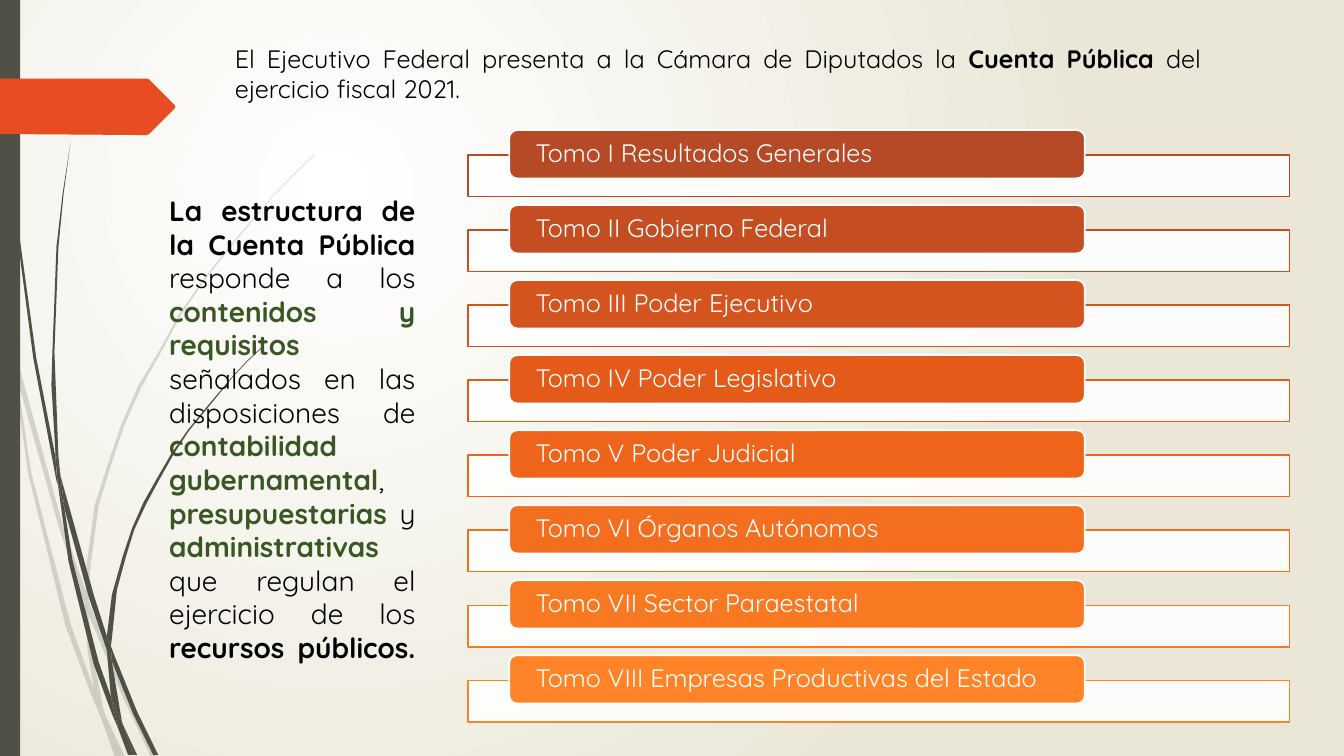
from lxml import etree
from pptx import Presentation
from pptx.dml.color import RGBColor
from pptx.enum.shapes import MSO_SHAPE
from pptx.enum.text import MSO_ANCHOR, MSO_AUTO_SIZE, PP_ALIGN
from pptx.oxml import parse_xml
from pptx.oxml.ns import qn
from pptx.util import Inches, Pt

RECT, ROUND = MSO_SHAPE.RECTANGLE, MSO_SHAPE.ROUNDED_RECTANGLE
MIDDLE, GROW = MSO_ANCHOR.MIDDLE, MSO_AUTO_SIZE.SHAPE_TO_FIT_TEXT
LEFT, JUSTIFY = PP_ALIGN.LEFT, PP_ALIGN.JUSTIFY

FONT = "Quicksand"
BLACK, WHITE, GREEN, GREY, RED = "000000", "FFFFFF", "385723", "505046", "E84C22"

BACK = """<a:gradFill xmlns:a="http://schemas.openxmlformats.org/drawingml/2006/main"
 rotWithShape="1"><a:gsLst>
<a:gs pos="0"><a:srgbClr val="FFFFFF"/></a:gs>
<a:gs pos="100000"><a:srgbClr val="EAE7D8"/></a:gs></a:gsLst>
<a:path path="circle"><a:fillToRect l="50000" t="50000" r="100000" b="100000"/></a:path>
</a:gradFill>"""

# Outlines are x, y pairs in inches.
PALE_GRASS = [
    (0.11, 3.5, 0.09, 3.22, 0, 2.82, 0, 2.99, 0.1, 3.44),
    (0.58, 5.22, 0.84, 5.99, 0.85, 5.86, 0.62, 5.2, 0.14, 3.45, 0.17, 3.76),
    (0.92, 6.07, 0.88, 5.96, 0.88, 6.1, 1.23, 6.94, 1.5, 7.51, 1.55, 7.51,
     1.27, 6.92),
    (1.19, 7.51, 1.24, 7.51, 1.05, 7.11),
    (0.93, 6.83, 0.7, 6.19, 0.31, 4.69, 0.17, 3.76, 0.11, 3.5, 0.28, 4.7,
     0.65, 6.21, 0.92, 6.93, 1.01, 7.14, 0.99, 7.07),
    (0.84, 5.99, 0.87, 6.46, 0.93, 6.83, 0.96, 6.92, 1.05, 7.11, 1.03, 7.06,
     0.91, 6.46, 0.88, 6.1, 0.88, 6.08),
    (0.88, 5.84, 0.9, 5.6, 0.98, 5.01, 1.1, 4.62, 1.23, 4.23, 1.4, 3.85,
     1.6, 3.49, 1.8, 3.12, 2.03, 2.78, 2.29, 2.45, 2.68, 1.98, 2.9, 1.75,
     3.12, 1.54, 3.12, 1.53, 2.89, 1.75, 2.68, 1.97, 2.28, 2.44, 2.02, 2.77,
     1.78, 3.11, 1.58, 3.48, 1.37, 3.83, 1.2, 4.22, 1.07, 4.61, 0.94, 5.01,
     0.86, 5.6, 0.85, 5.86, 0.88, 5.96),
    (1.01, 7.14, 1.14, 7.51, 1.19, 7.51),
    (0.88, 6.08, 0.88, 5.96, 0.85, 5.86, 0.84, 5.99),
    (0.96, 6.92, 0.93, 6.83, 0.99, 7.07, 1.01, 7.14, 1.19, 7.51, 1.05, 7.11),
]
DARK_GRASS = [
    (0.07, 1.1, 0.17, 2.33, 0.33, 3.55, 0.56, 4.77, 0.57, 4.81, 0.55, 4.53,
     0.36, 3.55, 0.19, 2.32, 0.08, 1.09, 0.05, 0.48, 0.04, 0, 0.03, 0,
     0.04, 0.48),
    (0.88, 5.92, 1.06, 6.45, 1.06, 6.31, 0.93, 5.9, 0.6, 4.72, 0.64, 5.05),
    (1.13, 6.49, 1.1, 6.41, 1.11, 6.56, 1.32, 7.08, 1.52, 7.49, 1.57, 7.49,
     1.36, 7.06),
    (1.1, 6.91, 0.98, 6.57, 0.72, 5.56, 0.64, 5.05, 0.57, 4.77, 0.68, 5.57,
     0.93, 6.59, 1.11, 7.08, 1.17, 7.22, 1.16, 7.17),
    (0.6, 4.72, 0.58, 4.53, 0.54, 3.49, 0.58, 2.45, 0.63, 1.93, 0.7, 1.41,
     0.62, 1.93, 0.56, 2.45, 0.52, 3.49, 0.51, 3.82, 0.55, 4.49),
    (1.33, 7.49, 1.36, 7.49, 1.22, 7.19),
    (0.57, 4.77, 0.64, 5.05, 0.6, 4.72, 0.55, 4.49, 0.55, 4.53),
    (1.11, 6.33, 1.16, 5.85, 1.25, 5.52, 1.33, 5.26, 1.45, 5, 1.58, 4.76,
     1.72, 4.51, 1.87, 4.28, 2.05, 4.06, 2.31, 3.74, 2.45, 3.59, 2.61, 3.44,
     2.6, 3.44, 2.45, 3.58, 2.31, 3.73, 2.04, 4.05, 1.86, 4.27, 1.7, 4.5,
     1.56, 4.74, 1.42, 4.99, 1.31, 5.24, 1.22, 5.51, 1.11, 5.9, 1.06, 6.31,
     1.1, 6.41),
    (1.17, 7.22, 1.27, 7.49, 1.31, 7.49),
    (1.06, 6.45, 1.1, 6.91, 1.16, 7.06, 1.22, 7.19, 1.21, 7.16, 1.11, 6.56,
     1.09, 6.51),
    (1.06, 6.45, 1.09, 6.51, 1.11, 6.56, 1.1, 6.41, 1.06, 6.31),
    (1.16, 7.06, 1.1, 6.91, 1.16, 7.17, 1.17, 7.22, 1.3, 7.49, 1.33, 7.49,
     1.22, 7.19),
]
ARROW = (1.73, 1.08, 1.48, 1.33, 1.46, 1.34, 1.36, 1.34, 0, 1.33, 0, 0.78,
         1.46, 0.78, 1.48, 0.79, 1.73, 1.04, 1.74, 1.06)

INTRO = [("El Ejecutivo Federal presenta a la Cámara de Diputados la ", BLACK, False),
         ("Cuenta Pública ", BLACK, True),
         ("del ejercicio fiscal 2021.", BLACK, False)]
BODY = [("La estructura de la Cuenta Pública ", BLACK, True),
        ("responde a los ", BLACK, False),
        ("contenidos y requisitos ", GREEN, True),
        ("señalados en las disposiciones de ", BLACK, False),
        ("contabilidad gubernamental", GREEN, True),
        (", ", BLACK, False),
        ("presupuestarias", GREEN, True),
        (" y ", BLACK, False),
        ("administrativas", GREEN, True),
        (" que regulan el ejercicio de los ", BLACK, False),
        ("recursos públicos. ", BLACK, True)]
TOMES = [("Tomo I Resultados Generales", "B64926"),
         ("Tomo II Gobierno Federal", "C44E22"),
         ("Tomo III Poder Ejecutivo", "D3541E"),
         ("Tomo IV Poder Legislativo", "E35A19"),
         ("Tomo V Poder Judicial", "ED641A"),
         ("Tomo VI Órganos Autónomos", "F36E1E"),
         ("Tomo VII Sector Paraestatal", "F97922"),
         ("Tomo VIII Empresas Productivas del Estado", "FF8427")]
TOP, STEP = 1.29, 5.21 / 7


def rgb(code):
    return RGBColor.from_string(code)


def write(frame, runs, size=18, align=LEFT, space=None):
    """Fill the frame's first paragraph with (text, colour, bold) runs."""
    frame.word_wrap = True
    para = frame.paragraphs[0]
    para.alignment = align
    para.line_spacing = space
    for text, color, bold in runs:
        run = para.add_run()
        run.text = text
        font = run.font
        font.name, font.size, font.bold = FONT, Pt(size), bold
        font.color.rgb = rgb(color)


class Deck:
    def __init__(self):
        self.prs = Presentation()
        self.prs.slide_width, self.prs.slide_height = Inches(13.33), Inches(7.5)
        self.slide = self.prs.slides.add_slide(self.prs.slide_layouts[6])
        self.shapes = self.slide.shapes

    def back(self):
        fill = self.slide.background.fill
        fill.solid()
        solid = self.slide.element.find(".//" + qn("p:bgPr")).find(qn("a:solidFill"))
        solid.getparent().replace(solid, parse_xml(BACK))

    def paint(self, shape, fill, line=None, alpha=100):
        shape.shadow.inherit = False
        shape.fill.solid()
        shape.fill.fore_color.rgb = rgb(fill)
        if alpha < 100:
            color = shape.fill._xPr.find(".//" + qn("a:srgbClr"))
            etree.SubElement(color, qn("a:alpha")).set("val", str(alpha * 1000))
        if line:
            shape.line.color.rgb = rgb(line)
            shape.line.width = Pt(1.25)
        else:
            shape.line.fill.background()

    def box(self, kind, x, y, w, h, fill, **look):
        shape = self.shapes.add_shape(kind, Inches(x), Inches(y), Inches(w), Inches(h))
        self.paint(shape, fill, **look)
        return shape

    def outline(self, shapes, flat, fill, **look):
        spots = [(Inches(x), Inches(y)) for x, y in zip(flat[::2], flat[1::2])]
        pen = shapes.build_freeform(*spots[0])
        pen.add_line_segments(spots[1:], close=True)
        self.paint(pen.convert_to_shape(), fill, **look)

    def grass(self, blades, alpha):
        group = self.shapes.add_group_shape()
        for blade in blades:
            self.outline(group.shapes, blade, GREY, alpha=alpha)

    def text(self, x, y, w, h, runs, **form):
        box = self.shapes.add_textbox(Inches(x), Inches(y), Inches(w), Inches(h))
        write(box.text_frame, runs, **form)
        box.text_frame.auto_size = GROW

    def tome(self, y, title, color):
        self.box(RECT, 4.64, y + 0.25, 8.15, 0.41, WHITE, line=color, alpha=90)
        label = self.box(ROUND, 5.05, y, 5.71, 0.48, color, line=WHITE)
        frame = label.text_frame
        frame.margin_left = frame.margin_right = Inches(0.24)
        frame.margin_top = frame.margin_bottom = 0
        frame.vertical_anchor = MIDDLE
        write(frame, [(title, WHITE, False)], space=0.9)


def main():
    deck = Deck()
    deck.back()
    deck.grass(PALE_GRASS, 20)
    deck.grass(DARK_GRASS, 100)
    deck.box(RECT, 0, 0, 0.2, 7.5, GREY)
    deck.outline(deck.shapes, ARROW, RED)
    deck.text(2.23, 0.38, 9.78, 0.71, INTRO, align=JUSTIFY)
    deck.text(1.58, 1.87, 2.64, 4.81, BODY, size=20, align=JUSTIFY)
    for row, (title, color) in enumerate(TOMES):
        deck.tome(TOP + row * STEP, title, color)
    deck.prs.save("out.pptx")


if __name__ == "__main__":
    main()
